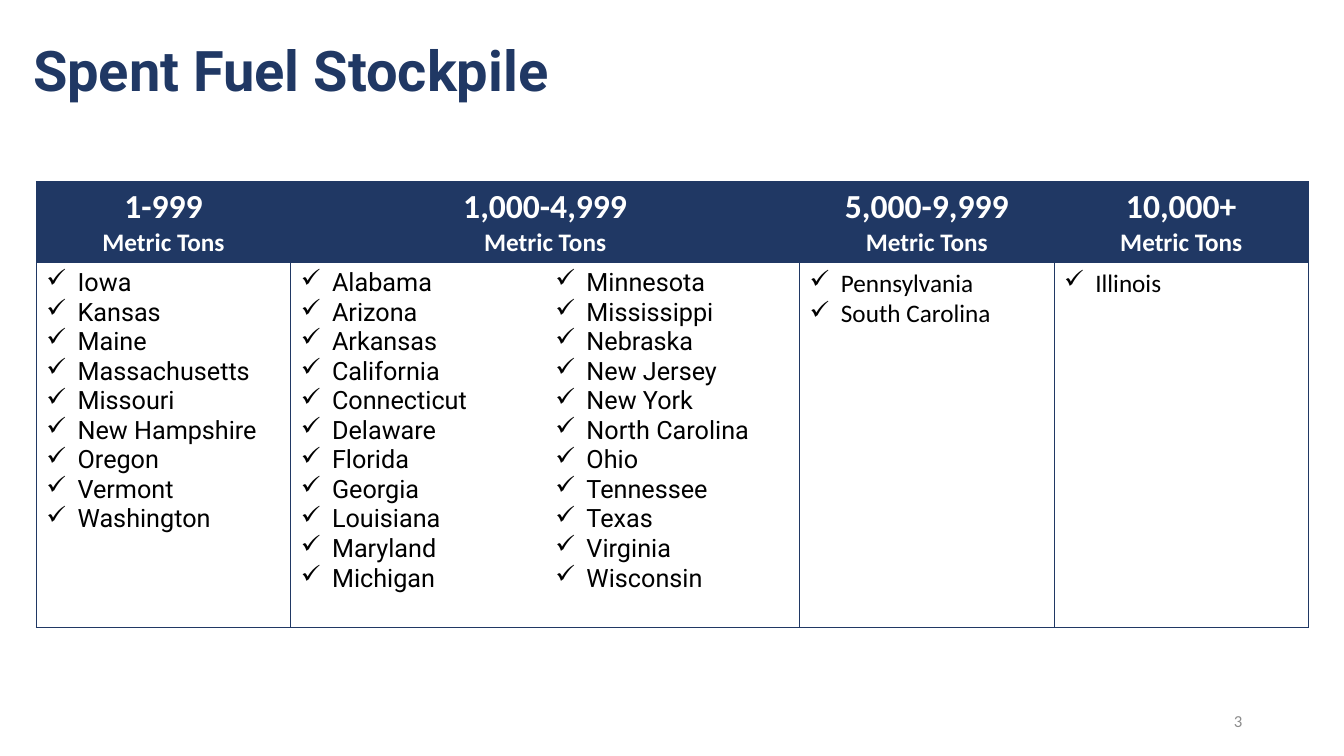
"""Build the spent fuel stockpile slide with its table of states by tonnage."""
from dataclasses import dataclass

from pptx import Presentation
from pptx.dml.color import RGBColor
from pptx.enum.text import MSO_ANCHOR, PP_ALIGN
from pptx.oxml.ns import qn
from pptx.util import Inches, Pt
from lxml.etree import SubElement


@dataclass(frozen=True)
class Theme:
    navy: str = "203864"
    white: str = "FFFFFF"
    black: str = "000000"
    grey: str = "8C8C8C"
    heading_font: str = "Roboto"
    body_font: str = "Calibri"
    title_size: int = 40
    range_size: int = 24
    body_size: int = 18
    number_size: int = 12
    border_width: float = 0.75


theme = Theme()


def format_text(para, font, size, color, bold=False):
    for span in para.runs:
        span.font.name = font
        span.font.size = Pt(size)
        span.font.bold = bold
        span.font.color.rgb = RGBColor.from_string(color)


def set_borders(cell, sides):
    properties = cell._tc.get_or_add_tcPr()
    for position, side in enumerate("LRTB"):
        line = SubElement(properties, qn(f"a:ln{side}"), w=str(Pt(theme.border_width)))
        properties.insert(position, line)
        if side in sides:
            fill = SubElement(line, qn("a:solidFill"))
            SubElement(fill, qn("a:srgbClr"), val=theme.navy)
        else:
            SubElement(line, qn("a:noFill"))


headers = {0: "1-999", 1: "1,000-4,999", 3: "5,000-9,999", 4: "10,000+"}
columns = [
    (["Iowa", "Kansas", "Maine", "Massachusetts", "Missouri", "New Hampshire",
      "Oregon", "Vermont", "Washington"], theme.heading_font, "LRB"),
    (["Alabama", "Arizona", "Arkansas", "California", "Connecticut", "Delaware",
      "Florida", "Georgia", "Louisiana", "Maryland", "Michigan"], theme.heading_font, "LB"),
    (["Minnesota", "Mississippi", "Nebraska", "New Jersey", "New York", "North Carolina",
      "Ohio", "Tennessee", "Texas", "Virginia", "Wisconsin"], theme.heading_font, "RB"),
    (["Pennsylvania", "South Carolina"], theme.body_font, "LRB"),
    (["Illinois"], theme.body_font, "LRB"),
]

deck = Presentation()
deck.slide_width = Inches(13.33)
deck.slide_height = Inches(7.5)
page = deck.slides.add_slide(deck.slide_layouts[6])

title = page.shapes.add_textbox(Inches(0.23), Inches(0), Inches(11.5), Inches(1.45))
title.text_frame.word_wrap = True
title.text_frame.vertical_anchor = MSO_ANCHOR.MIDDLE
title.text_frame.text = "Spent Fuel Stockpile"
title_para = title.text_frame.paragraphs[0]
title_para.line_spacing = 0.9
format_text(title_para, theme.heading_font, theme.title_size, theme.navy, bold=True)

frame = page.shapes.add_table(2, len(columns), Inches(0.36), Inches(1.8), Inches(12.62), Inches(4.43))
table = frame.table
table.horz_banding = False
table.rows[0].height = Inches(0.81)
table.rows[1].height = Inches(3.62)
table.cell(0, 1).merge(table.cell(0, 2))

for index, (states, font, sides) in enumerate(columns):
    table.columns[index].width = Inches(12.62 / len(columns))

    header = table.cell(0, index)
    header.fill.solid()
    header.fill.fore_color.rgb = RGBColor.from_string(theme.navy)
    set_borders(header, "LRTB")
    if index in headers:
        header.text_frame.text = f"{headers[index]}\nMetric Tons"
        for para, size in zip(header.text_frame.paragraphs, (theme.range_size, theme.body_size)):
            para.alignment = PP_ALIGN.CENTER
            format_text(para, theme.body_font, size, theme.white, bold=True)

    body = table.cell(1, index)
    body.fill.solid()
    body.fill.fore_color.rgb = RGBColor.from_string(theme.white)
    color = body._tc.tcPr.find(f"{qn('a:solidFill')}/{qn('a:srgbClr')}")
    SubElement(color, qn("a:alpha"), val="94000")
    set_borders(body, sides)
    body.text_frame.text = "\n".join(states)
    for para in body.text_frame.paragraphs:
        properties = para._p.get_or_add_pPr()
        properties.set("marL", str(Inches(0.31)))
        properties.set("indent", str(Inches(-0.31)))
        SubElement(properties, qn("a:buChar"), char="✓")
        format_text(para, font, theme.body_size, theme.black)

number = page.shapes.add_textbox(Inches(9.42), Inches(6.95), Inches(3), Inches(0.4))
number.text_frame.word_wrap = True
number.text_frame.vertical_anchor = MSO_ANCHOR.MIDDLE
number.text_frame.text = "3"
number_para = number.text_frame.paragraphs[0]
number_para.alignment = PP_ALIGN.RIGHT
format_text(number_para, theme.body_font, theme.number_size, theme.grey)

deck.save("out.pptx")
